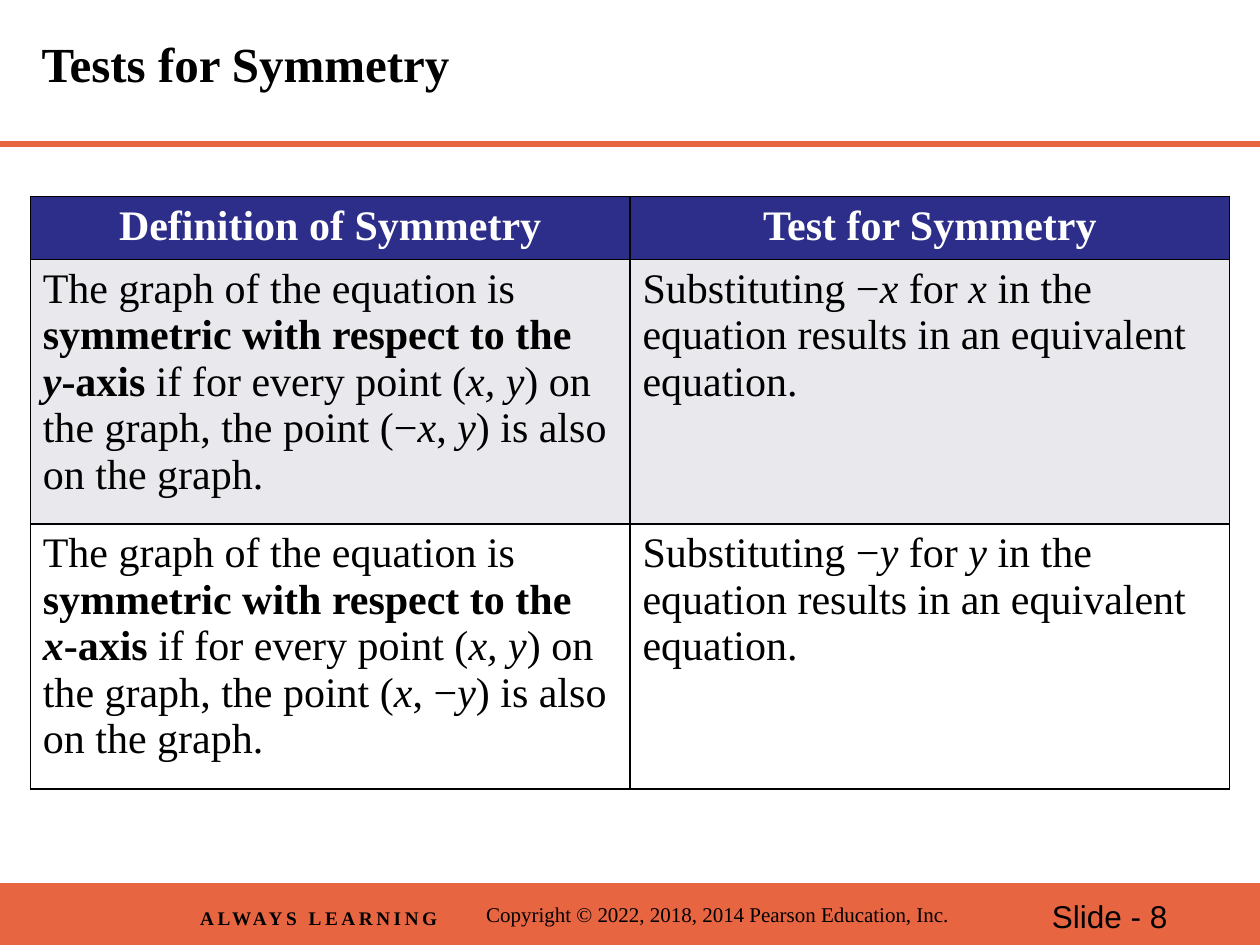
from dataclasses import dataclass
from typing import NamedTuple

from lxml.etree import SubElement
from pptx import Presentation
from pptx.dml.color import RGBColor
from pptx.enum.shapes import MSO_CONNECTOR, MSO_SHAPE
from pptx.enum.text import MSO_ANCHOR, PP_ALIGN
from pptx.oxml.ns import qn
from pptx.util import Inches, Pt

SLIDE_WIDTH, SLIDE_HEIGHT = Inches(10), Inches(7.5)
ORANGE = RGBColor(0xE8, 0x65, 0x42)
NAVY = RGBColor(0x2D, 0x2D, 0x8A)
PALE = RGBColor(0xE8, 0xE8, 0xED)
WHITE = RGBColor(0xFF, 0xFF, 0xFF)
BLACK = RGBColor(0, 0, 0)
SERIF, SANS = "Times New Roman", "Arial"
LINE_BREAK = "\n"


def across(percent: float) -> int:
    return round(SLIDE_WIDTH * percent / 100)


def down(percent: float) -> int:
    return round(SLIDE_HEIGHT * percent / 100)


class Area(NamedTuple):
    """A rectangle in percent of the slide's size."""
    left: float
    top: float
    width: float
    height: float

    def lengths(self) -> tuple[int, int, int, int]:
        return (across(self.left), down(self.top),
                across(self.width), down(self.height))


class Piece(NamedTuple):
    text: str
    bold: bool = False
    italic: bool = False


@dataclass
class FooterText:
    text: str
    area: Area
    size: int
    font: str = SERIF
    bold: bool = False
    spacing: int = 0  # hundredths of a point


@dataclass
class TableRow:
    cells: list[list[list[Piece]]]  # cells > paragraphs > pieces
    height: float
    fill: RGBColor
    color: RGBColor = BLACK
    alignment: PP_ALIGN = PP_ALIGN.LEFT


def format_font(font, name: str, size: float, color: RGBColor,
                bold: bool = False, italic: bool = False) -> None:
    font.name, font.size = name, Pt(size)
    font.bold, font.italic = bold, italic
    font.color.rgb = color


def var(name: str) -> Piece:
    return Piece(name, italic=True)


def definition(axis: str, reflected_point: list[Piece]) -> list[list[Piece]]:
    return [
        [Piece("The graph of the equation is "),
         Piece("symmetric with respect to the ", bold=True),
         Piece(LINE_BREAK),
         Piece(axis, bold=True, italic=True), Piece("-axis", bold=True),
         Piece(" if for every point ("), var("x, y"),
         Piece(") on the graph, the point ("), *reflected_point,
         Piece(") is also")],
        [Piece("on the graph.")],
    ]


def substitution(name: str) -> list[list[Piece]]:
    return [[Piece("Substituting −"), var(name), Piece(" for "), var(name),
             Piece(" in the equation results in an equivalent equation.")]]


def add_footer_text(slide, item: FooterText) -> None:
    text_box = slide.shapes.add_textbox(*item.area.lengths())
    text_box.text_frame.word_wrap = True
    text_box.text_frame.text = item.text
    run = text_box.text_frame.paragraphs[0].runs[0]
    format_font(run.font, item.font, item.size, BLACK, item.bold)
    if item.spacing:
        run.font._element.set("spc", str(item.spacing))


def add_borders(cell) -> None:
    properties = cell._tc.get_or_add_tcPr()
    for side in ("a:lnL", "a:lnR", "a:lnT", "a:lnB"):
        line = SubElement(properties, qn(side), w=str(Pt(1)))
        fill = SubElement(line, qn("a:solidFill"))
        SubElement(fill, qn("a:srgbClr"), val=str(BLACK))


def fill_cell(cell, paragraphs: list[list[Piece]], row: TableRow) -> None:
    add_borders(cell)
    cell.fill.solid()
    cell.fill.fore_color.rgb = row.fill
    for index, pieces in enumerate(paragraphs):
        frame = cell.text_frame
        paragraph = frame.add_paragraph() if index else frame.paragraphs[0]
        paragraph.alignment = row.alignment
        for piece in pieces:
            if piece.text == LINE_BREAK:
                paragraph.add_line_break()
                continue
            run = paragraph.add_run()
            run.text = piece.text
            format_font(run.font, SERIF, 24, row.color, piece.bold, piece.italic)


def add_table(slide, area: Area, rows: list[TableRow]) -> None:
    column_count = len(rows[0].cells)
    table = slide.shapes.add_table(len(rows), column_count, *area.lengths()).table
    for column in table.columns:
        column.width = across(area.width / column_count)
    for row_index, row in enumerate(rows):
        table.rows[row_index].height = down(row.height)
        for column_index, paragraphs in enumerate(row.cells):
            fill_cell(table.cell(row_index, column_index), paragraphs, row)


FOOTER = [
    FooterText("Copyright © 2022, 2018, 2014 Pearson Education, Inc.",
               Area(37.6, 94.8, 38.9, 4), 12),
    FooterText("Slide - 8", Area(82.5, 94.27, 15, 5.33), 18, SANS),
    FooterText("ALWAYS LEARNING", Area(14.9, 95.2, 23.2, 3.87), 11,
               bold=True, spacing=200),
]
ROWS = [
    TableRow([[[Piece("Definition of Symmetry", bold=True)]],
              [[Piece("Test for Symmetry", bold=True)]]],
             6.27, NAVY, WHITE, PP_ALIGN.CENTER),
    TableRow([definition("y", [Piece("−"), var("x"), Piece(", "), var("y")]),
              substitution("x")], 25.87, PALE),
    TableRow([definition("x", [var("x"), Piece(", −"), var("y")]),
              substitution("y")], 25.87, WHITE),
]


def main() -> None:
    presentation = Presentation()
    presentation.slide_width, presentation.slide_height = SLIDE_WIDTH, SLIDE_HEIGHT
    slide = presentation.slides.add_slide(presentation.slide_layouts[5])

    # Footer band
    band = slide.shapes.add_shape(MSO_SHAPE.RECTANGLE,
                                  *Area(0, 93.47, 100, 6.53).lengths())
    band.shadow.inherit = False
    band.fill.solid()
    band.fill.fore_color.rgb = ORANGE
    band.line.fill.background()
    for item in FOOTER:
        add_footer_text(slide, item)

    # Rule under the title
    rule = slide.shapes.add_connector(MSO_CONNECTOR.STRAIGHT, 0, down(15.2),
                                      SLIDE_WIDTH, down(15.2))
    rule.line.color.rgb = ORANGE
    rule.line.width = Pt(3.5)
    SubElement(rule._element.spPr, qn("a:effectLst"))

    # Title
    title = slide.shapes.title
    title.left, title.top, title.width, title.height = Area(
        2.3, 0, 95.2, 14.53).lengths()
    title.text_frame.text = "Tests for Symmetry"
    title.text_frame.vertical_anchor = MSO_ANCHOR.MIDDLE
    paragraph = title.text_frame.paragraphs[0]
    paragraph.alignment = PP_ALIGN.LEFT
    paragraph.line_spacing = 0.8
    format_font(paragraph.runs[0].font, SERIF, 28, BLACK, bold=True)

    # Symmetry table
    add_table(slide, Area(2.4, 20.8, 95.2, 58.01), ROWS)
    presentation.save("out.pptx")


if __name__ == "__main__":
    main()
